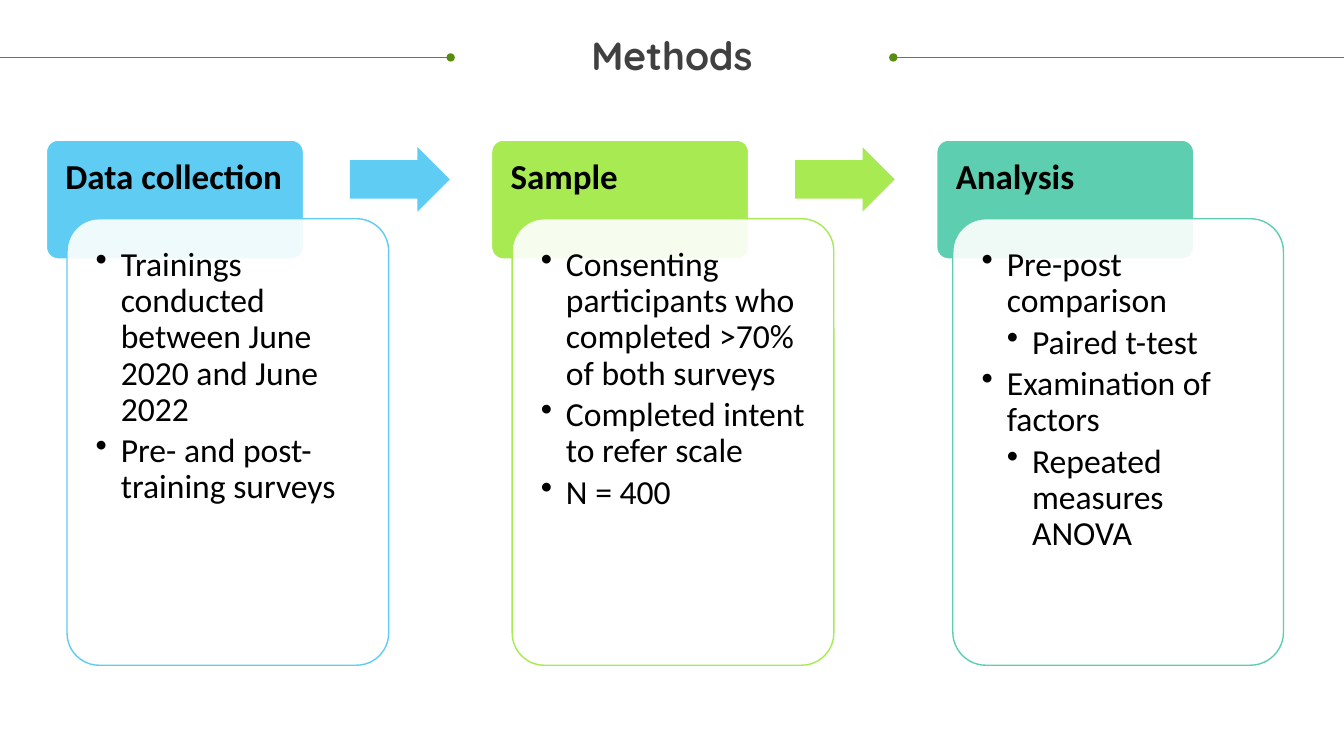
from lxml import etree
from pptx import Presentation
from pptx.dml.color import RGBColor
from pptx.enum.shapes import MSO_CONNECTOR as Connector, MSO_SHAPE as Shape
from pptx.enum.text import MSO_ANCHOR as Anchor, PP_ALIGN as Align
from pptx.oxml.ns import qn
from pptx.util import Inches, Pt

SLIDE_WIDTH, SLIDE_HEIGHT = 13.33, 7.5
FIRST_LEFT, COLUMN_TOP, COLUMN_PITCH = 0.46, 1.39, 4.415
HEADER_WIDTH, HEADER_HEIGHT = 2.55, 1.18
CARD_CENTER, CARD_DROP, CARD_HEIGHT = 1.8, 0.78, 4.43

STEPS = [
    ("Data collection", "5ECCF3", 3.19, [
        (1, "Trainings conducted between June 2020 and June 2022"),
        (1, "Pre- and post-training surveys"),
    ]),
    ("Sample", "A7EA52", 3.19, [
        (1, "Consenting participants who completed >70% of both surveys"),
        (1, "Completed intent to refer scale"),
        (1, "N = 400"),
    ]),
    ("Analysis", "5DCEAF", 3.28, [
        (1, "Pre-post comparison"),
        (2, "Paired t-test"),
        (1, "Examination of factors"),
        (2, "Repeated measures ANOVA"),
    ]),
]


def color(hex_code):
    """Return the colour for a hex string."""
    return RGBColor.from_string(hex_code)


def set_frame(frame, left, top, right, bottom):
    """Wrap a text frame, anchor it at the top and set its margins."""
    frame.word_wrap = True
    frame.vertical_anchor = Anchor.TOP
    frame.margin_left, frame.margin_top = Inches(left), Inches(top)
    frame.margin_right, frame.margin_bottom = Inches(right), Inches(bottom)


def format_para(para, font_name, size, hex_code, bold=False, align=Align.LEFT, after=0):
    """Set the spacing of a paragraph and the font of its runs."""
    para.alignment = align
    para.line_spacing = 0.9
    para.space_before, para.space_after = Pt(0), Pt(after)
    for span in para.runs:
        span.font.name, span.font.size, span.font.bold = font_name, Pt(size), bold
        span.font.color.rgb = color(hex_code)


def add_bullet(para, level):
    """Give a paragraph a hanging bullet at the given level."""
    para.level = level
    props = para._p.get_or_add_pPr()
    props.set("marL", str(Inches(0.25 * level)))
    props.set("indent", str(-Inches(0.25)))
    etree.SubElement(props, qn("a:buChar")).set("char", "•")


def add_block(slide, kind, left, top, width, height, fill, line=None):
    """Add a filled preset shape, outlined if a line colour is given."""
    block = slide.shapes.add_shape(
        kind, Inches(left), Inches(top), Inches(width), Inches(height))
    block.shadow.inherit = False
    block.fill.solid()
    block.fill.fore_color.rgb = color(fill)
    if line:
        block.line.color.rgb = color(line)
        block.line.width = Pt(1)
    else:
        block.line.fill.background()
    return block


def add_rule(slide, start, end, y, dot_end):
    """Add a thin horizontal rule with a dot at one end."""
    rule = slide.shapes.add_connector(
        Connector.STRAIGHT, Inches(start), Inches(y), Inches(end), Inches(y))
    rule.line.color.rgb = color("568D11")
    rule.line.width = Pt(0.5)
    etree.SubElement(rule.line._get_or_add_ln(), qn(dot_end)).set("type", "oval")
    etree.SubElement(rule._element.spPr, qn("a:effectLst"))


def add_title(slide, left, top, width, height):
    """Add the centred title between two dotted rules."""
    middle = top + height / 2
    add_rule(slide, 8.86, SLIDE_WIDTH, middle, "a:headEnd")
    box = slide.shapes.add_textbox(
        Inches(left), Inches(top), Inches(width), Inches(height))
    set_frame(box.text_frame, 0, 0, 0, 0)
    para = box.text_frame.paragraphs[0]
    para.text = "Methods"
    format_para(para, "Quicksand", 28, "404040", bold=True, align=Align.CENTER)
    add_rule(slide, 0, 4.47, middle, "a:tailEnd")


def add_header(slide, left, top, title, accent):
    """Add the coloured header of a step."""
    header = add_block(slide, Shape.ROUNDED_RECTANGLE, left, top,
                       HEADER_WIDTH, HEADER_HEIGHT, accent, "FFFFFF")
    header.adjustments[0] = 0.1
    set_frame(header.text_frame, 0.155, 0.155, 0.1, 0.1)
    para = header.text_frame.paragraphs[0]
    para.text = title
    format_para(para, "Calibri", 25, "000000", bold=True)


def add_card(slide, left, top, width, accent, items):
    """Add the translucent card with the bullets of a step."""
    card = add_block(slide, Shape.ROUNDED_RECTANGLE, left, top,
                     width, CARD_HEIGHT, "FFFFFF", accent)
    card.adjustments[0] = 0.1
    tint = card._element.spPr.find(qn("a:solidFill")).find(qn("a:srgbClr"))
    etree.SubElement(tint, qn("a:alpha")).set("val", "90000")
    frame = card.text_frame
    set_frame(frame, 0.19, 0.19, 0.19, 0.19)
    for index, (level, text) in enumerate(items):
        para = frame.add_paragraph() if index else frame.paragraphs[0]
        para.text = text
        format_para(para, "Calibri", 24, "000000", after=3.6)
        add_bullet(para, level)


def add_step(slide, left, top, step, has_next):
    """Add one step: header, card and the arrow to the next step."""
    title, accent, card_width, items = step
    add_header(slide, left, top, title, accent)
    add_card(slide, left + CARD_CENTER - card_width / 2, top + CARD_DROP,
             card_width, accent, items)
    if has_next:
        arrow = add_block(slide, Shape.RIGHT_ARROW, left + 3.01, top + 0.07,
                          0.99, 0.64, accent)
        arrow.adjustments[0], arrow.adjustments[1] = 0.6, 0.5


def main():
    """Build the methods slide and save the deck."""
    deck = Presentation()
    deck.slide_width, deck.slide_height = Inches(SLIDE_WIDTH), Inches(SLIDE_HEIGHT)
    page = deck.slides.add_slide(deck.slide_layouts[6])
    add_title(page, 0.25, 0.36, 12.83, 0.42)
    for index, step in enumerate(STEPS):
        add_step(page, FIRST_LEFT + index * COLUMN_PITCH, COLUMN_TOP, step,
                 index < len(STEPS) - 1)
    deck.save("out.pptx")


if __name__ == "__main__":
    main()
